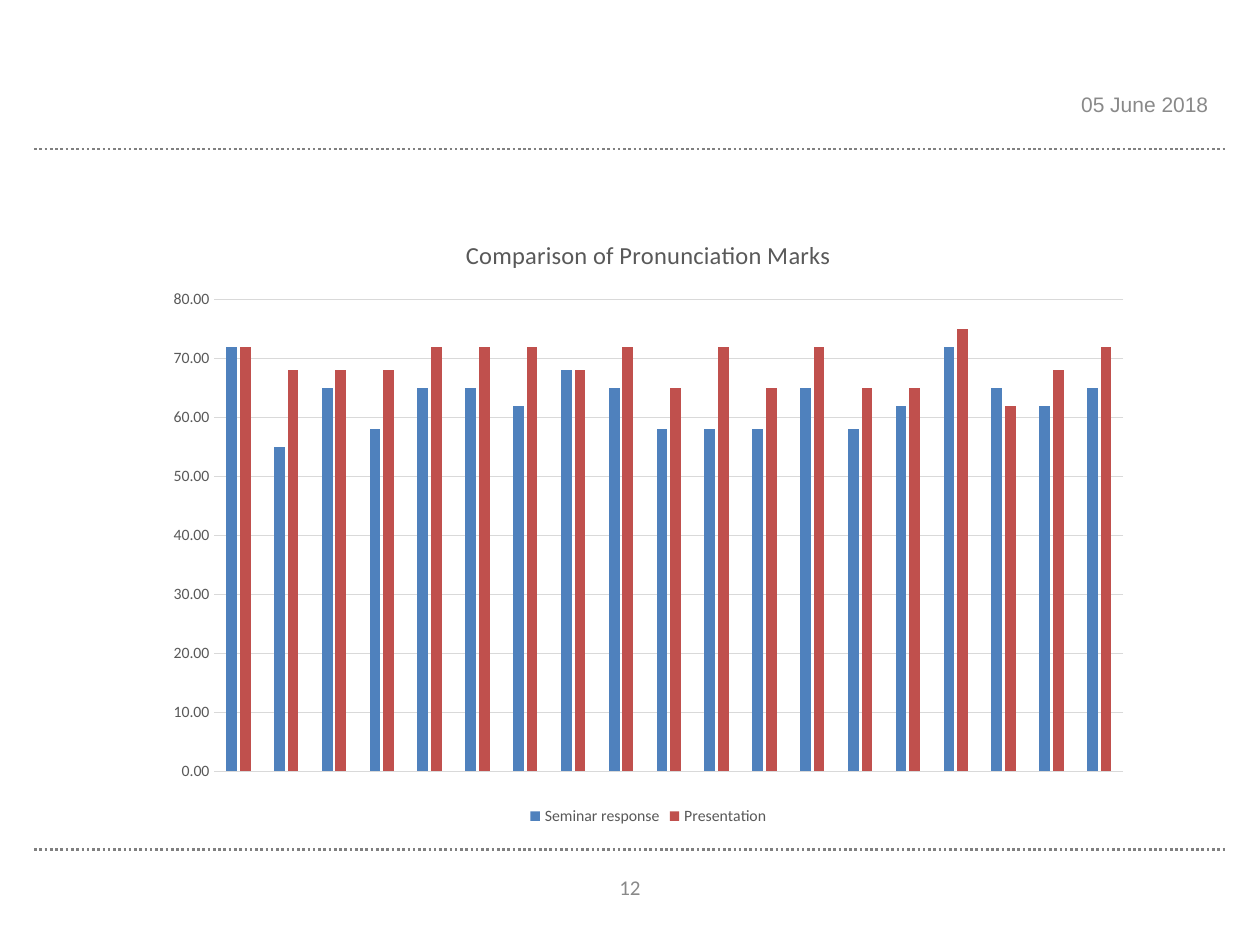
"""Build a slide with a column chart comparing pronunciation marks."""
from lxml import etree
from pptx import Presentation
from pptx import util as u
from pptx.chart.data import CategoryChartData
from pptx.dml.color import RGBColor
from pptx.enum import chart as ch, dml, shapes, text
from pptx.oxml.ns import qn

RULE = RGBColor(0x80, 0x80, 0x80)
MUTED = RGBColor(0x89, 0x89, 0x89)
DARK = RGBColor(0x59, 0x59, 0x59)
GRID = RGBColor(0xD9, 0xD9, 0xD9)
BLUE = RGBColor(0x4F, 0x81, 0xBD)
RED = RGBColor(0xC0, 0x50, 0x4D)

SERIES = [
    ("Seminar response", BLUE, [72, 55, 65, 58, 65, 65, 62, 68, 65, 58,
                                58, 58, 65, 58, 62, 72, 65, 62, 65]),
    ("Presentation", RED, [72, 68, 68, 68, 72, 72, 72, 68, 72, 65,
                           72, 65, 72, 65, 65, 75, 62, 68, 72]),
]


def style(font, name, size, color):
    font.name = name
    font.size = u.Pt(size)
    font.bold = False
    font.color.rgb = color


prs = Presentation()
prs.slide_width, prs.slide_height = u.Cm(25.4), u.Cm(19.05)
s = prs.slides.add_slide(prs.slide_layouts[6])

for y in (3, 17.12):
    ln = s.shapes.add_connector(shapes.MSO_CONNECTOR.STRAIGHT,
                                u.Cm(0.69), u.Cm(y), u.Cm(24.71), u.Cm(y))
    ln.line.color.rgb = RULE
    ln.line.width = u.Pt(1.5)
    ln.line.dash_style = dml.MSO_LINE.ROUND_DOT
    etree.SubElement(ln._element.spPr, qn("a:effectLst"))

for label, x, y, w, font, align, anchor in [
    ("12", 11.7, 17.37, 2, "Calibri", text.PP_ALIGN.CENTER, text.MSO_ANCHOR.MIDDLE),
    ("05 June 2018", 18.69, 1.73, 5.92, "Arial", text.PP_ALIGN.RIGHT, text.MSO_ANCHOR.TOP),
]:
    tf = s.shapes.add_textbox(u.Cm(x), u.Cm(y), u.Cm(w), u.Cm(1.02)).text_frame
    tf.word_wrap = True
    tf.vertical_anchor = anchor
    tf.text = label
    p = tf.paragraphs[0]
    p.alignment = align
    style(p.runs[0].font, font, 12, MUTED)

data = CategoryChartData(number_format="0.00")
data.categories = [str(n) for n in range(1, 20)]
for name, _, marks in SERIES:
    data.add_series(name, marks)
chart = s.shapes.add_chart(ch.XL_CHART_TYPE.COLUMN_CLUSTERED, u.Cm(3.1), u.Cm(4.32),
                           u.Cm(19.94), u.Cm(12.42), data).chart
style(chart.font, "Calibri", 10, DARK)

chart.has_title = True
tf = chart.chart_title.text_frame
tf.text = "Comparison of Pronunciation Marks"
style(tf.paragraphs[0].runs[0].font, "Calibri", 14, DARK)
chart.chart_title.include_in_layout = False

chart.has_legend = True
chart.legend.position = ch.XL_LEGEND_POSITION.BOTTOM
chart.legend.include_in_layout = False
style(chart.legend.font, "Calibri", 9, DARK)

chart.category_axis.visible = False
axis = chart.value_axis
axis.minimum_scale, axis.maximum_scale, axis.major_unit = 0, 80, 10
axis.major_tick_mark = ch.XL_TICK_MARK.NONE
axis.format.line.fill.background()
axis.major_gridlines.format.line.color.rgb = GRID
axis.major_gridlines.format.line.width = u.Pt(0.75)
axis.tick_labels.number_format = "0.00"
axis.tick_labels.number_format_is_linked = False
style(axis.tick_labels.font, "Calibri", 9, DARK)

plot = chart.plots[0]
plot.gap_width, plot.overlap = 219, -27
plot.vary_by_categories = False
for series, (_, color, _) in zip(plot.series, SERIES):
    series.format.fill.solid()
    series.format.fill.fore_color.rgb = color

prs.save("out.pptx")
